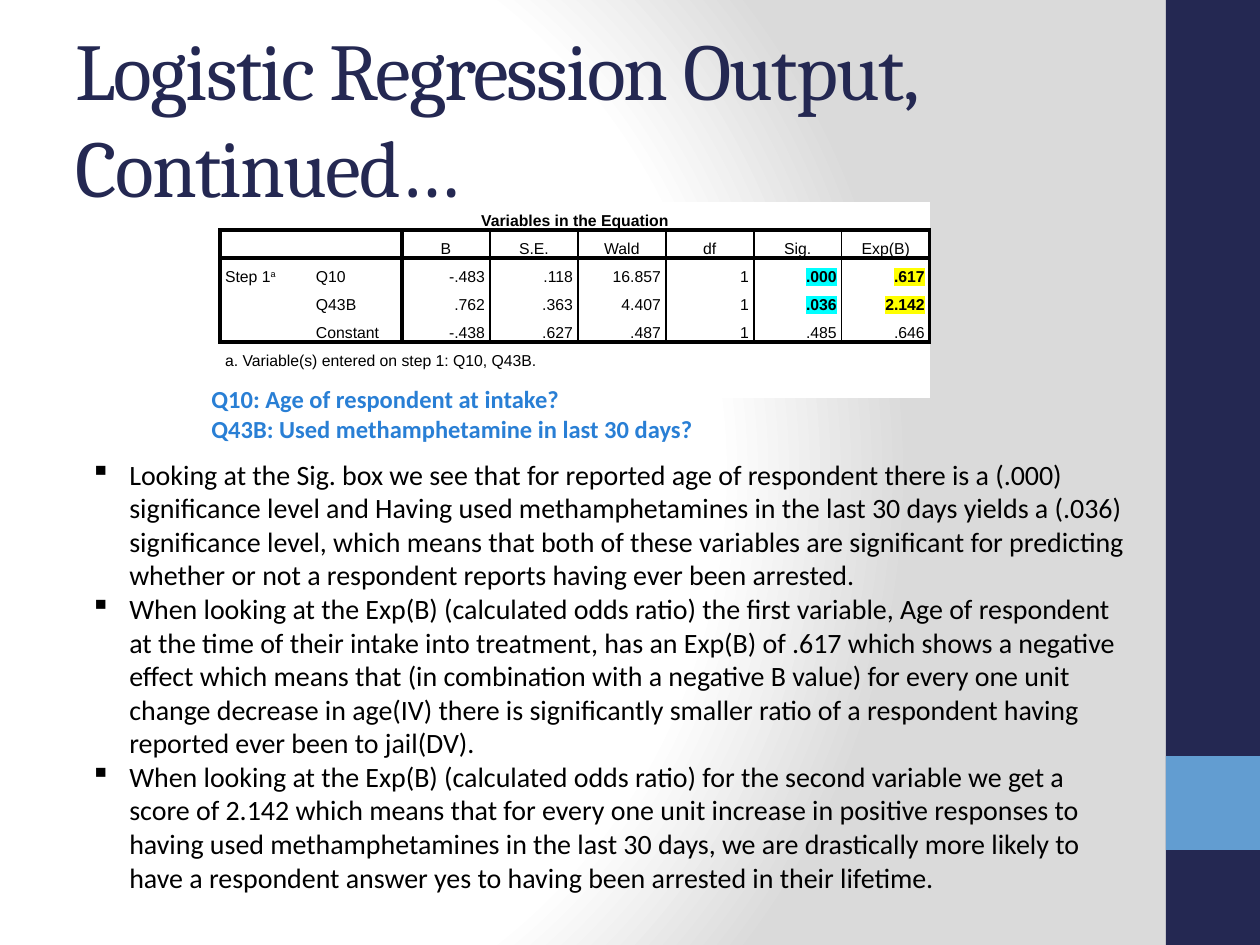
from pptx import Presentation
from pptx.dml.color import RGBColor
from pptx.enum.shapes import MSO_SHAPE
from pptx.enum.text import MSO_ANCHOR, PP_ALIGN
from pptx.oxml import parse_xml
from pptx.util import Pt

PX = 914400 // 126
NS = ('xmlns:a="http://schemas.openxmlformats.org/drawingml/2006/main" '
      'xmlns:p="http://schemas.openxmlformats.org/presentationml/2006/main"')
COLORS = {"navy": "242852", "sky": "629DD1", "blue": "297FD5", "black": "000000",
          "white": "FFFFFF", "gray": "DADADA", "cyan": "00FFFF", "yellow": "FFFF00"}


def style(paragraph, font, size, color, bold=False):
    paragraph.font.name = font
    paragraph.font.size = Pt(size)
    paragraph.font.bold = bold
    paragraph.font.color.rgb = RGBColor.from_string(COLORS[color])


def add_text(left, top, width, height, lines, font, size, color, bold=False):
    box = page.shapes.add_textbox(left * PX, top * PX, width * PX, height * PX)
    frame = box.text_frame
    frame.word_wrap = True
    frame.text = "\n".join(lines)
    for paragraph in frame.paragraphs:
        style(paragraph, font, size, color, bold)
    return frame


deck = Presentation()
deck.slide_width = 1260 * PX
deck.slide_height = 945 * PX
page = deck.slides.add_slide(deck.slide_layouts[6])

stops = "".join(
    f'<a:gs pos="{place}000"><a:srgbClr val="{COLORS[color]}"/></a:gs>'
    for place, color in [(0, "white"), (75, "white"), (100, "gray")])
page.element.cSld.insert(0, parse_xml(
    f'<p:bg {NS}><p:bgPr><a:gradFill><a:gsLst>{stops}</a:gsLst>'
    '<a:path path="circle"><a:fillToRect l="20000" t="50000" r="100000" b="50000"/></a:path>'
    '</a:gradFill><a:effectLst/></p:bgPr></p:bg>'))

for top, height, color in [(0, 945, "navy"), (756, 94, "sky")]:
    band = page.shapes.add_shape(MSO_SHAPE.RECTANGLE, 1166 * PX, top * PX, 94 * PX, height * PX)
    band.shadow.inherit = False
    band.fill.solid()
    band.fill.fore_color.rgb = RGBColor.from_string(COLORS[color])
    band.line.fill.background()

title = add_text(63, 38, 1050, 157, ["Logistic Regression Output, Continued…"], "Cambria", 46, "navy")
title.vertical_anchor = MSO_ANCHOR.MIDDLE
title.paragraphs[0].runs[0].font._element.set("spc", "-100")

ROWS = [
    ["Variables in the Equation"] + [""] * 7,
    ["", "", "B", "S.E.", "Wald", "df", "Sig.", "Exp(B)"],
    ["Step 1", "Q10", "-.483", ".118", "16.857", "1", ".000", ".617"],
    ["", "Q43B", ".762", ".363", "4.407", "1", ".036", "2.142"],
    ["", "Constant", "-.438", ".627", ".487", "1", ".485", ".646"],
    ["a. Variable(s) entered on step 1: Q10, Q43B."] + [""] * 7,
]
HEIGHTS = [28] * 5 + [56]
WIDTHS = [91] * 2 + [88] * 6
HEAVY_ROW_EDGES = (1, 2, 5)
COLUMN_EDGES = {0: 2.25, 2: 2.25, 3: 1, 4: 1, 5: 1, 6: 1, 7: 1, 8: 2.25}
HIGHLIGHTS = {(2, 6): "cyan", (3, 6): "cyan", (2, 7): "yellow", (3, 7): "yellow"}

table = page.shapes.add_table(len(ROWS), len(WIDTHS), 220 * PX, 202 * PX,
                              sum(WIDTHS) * PX, sum(HEIGHTS) * PX).table
table.first_row = False
table.horz_banding = False
for column, width in zip(table.columns, WIDTHS):
    column.width = width * PX
for row, height in zip(table.rows, HEIGHTS):
    row.height = height * PX

for r, values in enumerate(ROWS):
    for c, value in enumerate(values):
        cell = table.cell(r, c)
        cell.margin_left = cell.margin_right = cell.margin_top = cell.margin_bottom = 0
        cell.vertical_anchor = (MSO_ANCHOR.MIDDLE, MSO_ANCHOR.BOTTOM)[r] if r < 2 else MSO_ANCHOR.TOP
        cell.fill.solid()
        cell.fill.fore_color.rgb = RGBColor.from_string(COLORS["white"])

        paragraph = cell.text_frame.paragraphs[0]
        highlight = HIGHLIGHTS.get((r, c))
        style(paragraph, "Arial", 9, "black", r == 0 or highlight is not None)
        paragraph.line_spacing = Pt(16)
        if r < 2:
            paragraph.alignment = PP_ALIGN.CENTER
        elif c > 1:
            paragraph.alignment = PP_ALIGN.RIGHT
        properties = paragraph._p.get_or_add_pPr()
        for side in ("marL", "marR"):
            properties.set(side, str(5 * PX))
        if value:
            span = paragraph.add_run()
            span.text = value
            if highlight:
                span.font._element.append(parse_xml(
                    f'<a:highlight {NS}><a:srgbClr val="{COLORS[highlight]}"/></a:highlight>'))

        boxed = 1 <= r <= 4
        edges = {
            "lnL": COLUMN_EDGES.get(c) if boxed else None,
            "lnR": COLUMN_EDGES.get(c + 1) if boxed else None,
            "lnT": 2.25 if r in HEAVY_ROW_EDGES else None,
            "lnB": 2.25 if r + 1 in HEAVY_ROW_EDGES else None,
        }
        for place, (tag, weight) in enumerate(edges.items()):
            paint = (f'<a:solidFill><a:srgbClr val="{COLORS["black"]}"/></a:solidFill>'
                     if weight else "<a:noFill/>")
            cell._tc.tcPr.insert(place, parse_xml(
                f'<a:{tag} {NS} w="{int(Pt(weight or 0))}">{paint}</a:{tag}>'))

footnote_mark = table.cell(2, 0).text_frame.paragraphs[0].add_run()
footnote_mark.text = "a"
footnote_mark.font._element.set("baseline", "30000")

for first, last in [((0, 0), (0, 7)), ((1, 0), (1, 1)), ((2, 0), (4, 0)), ((5, 0), (5, 7))]:
    table.cell(*first).merge(table.cell(*last))

add_text(199, 378, 630, 72, [
    "Q10: Age of respondent at intake?",
    "Q43B: Used methamphetamine in last 30 days?",
], "Calibri", 14, "blue", True)

findings = add_text(78, 451, 1061, 491, [
    "Looking at the Sig. box we see that for reported age of respondent there is a (.000) "
    "significance level and Having used methamphetamines in the last 30 days yields a (.036) "
    "significance level, which means that both of these variables are significant for predicting "
    "whether or not a respondent reports having ever been arrested.",
    "When looking at the Exp(B) (calculated odds ratio) the first variable, Age of respondent "
    "at the time of their intake into treatment, has an Exp(B) of .617 which shows a negative "
    "effect which means that (in combination with a negative B value) for every one unit "
    "change decrease in age(IV) there is significantly smaller ratio of a respondent having "
    "reported ever been to jail(DV).",
    "When looking at the Exp(B) (calculated odds ratio) for the second variable we get a "
    "score of 2.142 which means that for every one unit increase in positive responses to "
    "having used methamphetamines in the last 30 days, we are drastically more likely to "
    "have a respondent answer yes to having been arrested in their lifetime.",
], "Calibri", 16, "black")
for paragraph in findings.paragraphs:
    properties = paragraph._p.get_or_add_pPr()
    properties.set("marL", str(39 * PX))
    properties.set("indent", str(-39 * PX))
    properties.insert(0, parse_xml(f'<a:buChar {NS} char="▪"/>'))

deck.save("out.pptx")
